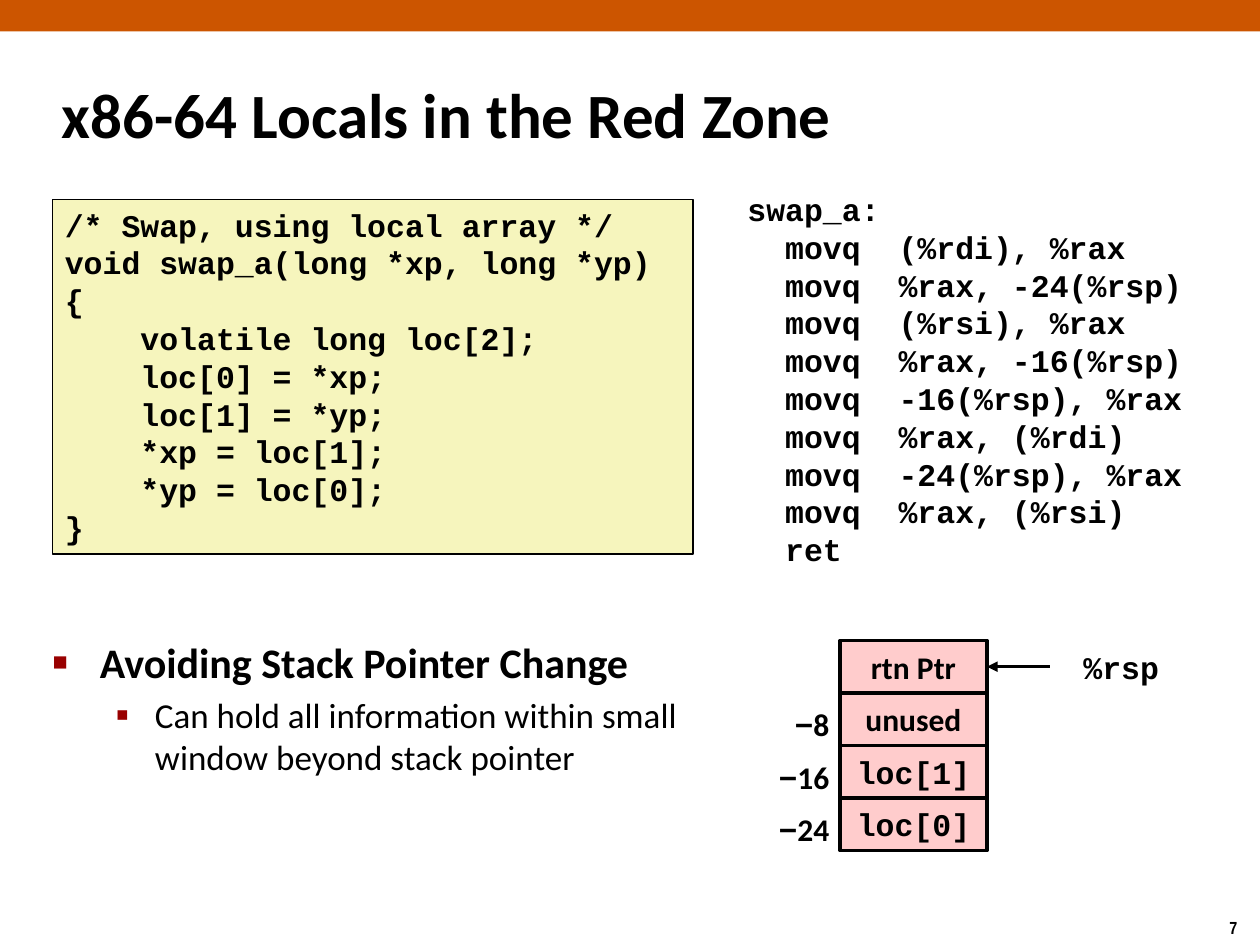
import dataclasses

import pptx
import pptx.dml.color
import pptx.enum.dml
import pptx.enum.shapes
import pptx.enum.text
import pptx.oxml
import pptx.oxml.ns
import pptx.util

Pt = pptx.util.Pt
RGB = pptx.dml.color.RGBColor.from_string
Align = pptx.enum.text.PP_ALIGN
Anchor = pptx.enum.text.MSO_ANCHOR
RECTANGLE = pptx.enum.shapes.MSO_SHAPE.RECTANGLE


@dataclasses.dataclass(frozen=True)
class Theme:
    ink: str = "000000"
    bar: str = "CC5500"
    code: str = "F6F5BD"
    stack: str = "FFCCCC"
    bullet: str = "990000"
    sans: str = "Calibri"
    mono: str = "Courier New"
    sign: str = "Arial"
    number: str = "Arial Narrow"
    title_size: int = 36
    point_size: int = 24
    detail_size: int = 20
    text_size: int = 18
    number_size: int = 10


theme = Theme()


def write(frame, lines, face, size=theme.text_size, align=Align.LEFT, **frame_format):
    frame_format = {"word_wrap": True, "vertical_anchor": Anchor.TOP} | frame_format
    for key, value in frame_format.items():
        setattr(frame, key, value)
    for index, line in enumerate(lines):
        paragraph = frame.add_paragraph() if index else frame.paragraphs[0]
        paragraph.alignment = align
        for text, run_face in line if isinstance(line, list) else [(line, face)]:
            run = paragraph.add_run()
            run.text = text
            run.font.color.rgb = RGB(theme.ink)
            for key, value in {"name": run_face, "size": Pt(size), "bold": True}.items():
                setattr(run.font, key, value)


def add_panel(left, top, width, height, fill, line_width):
    panel = slide.shapes.add_shape(RECTANGLE, Pt(left), Pt(top), Pt(width), Pt(height))
    panel.shadow.inherit = False
    panel.fill.solid()
    panel.fill.fore_color.rgb = RGB(fill)
    if line_width:
        panel.line.color.rgb = RGB(theme.ink)
        panel.line.width = Pt(line_width)
    else:
        panel.line.fill.background()
    return panel


deck = pptx.Presentation()
deck.slide_width, deck.slide_height = Pt(720), Pt(540)
slide = deck.slides.add_slide(deck.slide_layouts[5])

add_panel(0, 0, 720, 18, theme.bar, 0)

title = slide.shapes.title
for key, value in {"left": 28, "top": 34.5, "width": 597.5, "height": 60}.items():
    setattr(title, key, Pt(value))
write(title.text_frame, ["x86-64 Locals in the Red Zone"], theme.sans, theme.title_size,
      vertical_anchor=Anchor.MIDDLE, auto_size=pptx.enum.text.MSO_AUTO_SIZE.NONE)

page_number = slide.shapes.add_textbox(Pt(695.5), Pt(520.5), Pt(24.5), Pt(19.5))
write(page_number.text_frame, ["7"], theme.number, theme.number_size, word_wrap=False)

c_code = add_panel(30, 114, 366, 202.5, theme.code, 1)
write(c_code.text_frame, [
    "/* Swap, using local array */",
    "void swap_a(long *xp, long *yp) {",
    "    volatile long loc[2];",
    "    loc[0] = *xp;",
    "    loc[1] = *yp;",
    "    *xp = loc[1];",
    "    *yp = loc[0];",
    "}",
], theme.mono)

assembly = slide.shapes.add_textbox(Pt(420), Pt(105), Pt(282), Pt(223))
moves = ["(%rdi), %rax", "%rax, -24(%rsp)", "(%rsi), %rax", "%rax, -16(%rsp)",
         "-16(%rsp), %rax", "%rax, (%rdi)", "-24(%rsp), %rax", "%rax, (%rsi)"]
write(assembly.text_frame,
      ["swap_a:"] + [f"  movq  {operands}" for operands in moves] + ["  ret"], theme.mono)

points = slide.shapes.add_textbox(Pt(23), Pt(360), Pt(379.5), Pt(120))
write(points.text_frame, [
    "Avoiding Stack Pointer Change",
    "Can hold all information within small window beyond stack pointer",
], theme.sans)
point_formats = [
    (0, theme.point_size, True, 27, -27, "■", 60),
    (1, theme.detail_size, False, 58.5, -22.5, "▪", 110),
]
for point, (level, size, bold, margin, indent, mark, percent) in zip(
        points.text_frame.paragraphs, point_formats):
    for key, value in {"level": level, "space_before": Pt(size * 0.2)}.items():
        setattr(point, key, value)
    for key, value in {"size": Pt(size), "bold": bold}.items():
        setattr(point.runs[0].font, key, value)
    properties = point._p.get_or_add_pPr()
    for key, value in {"marL": margin, "indent": indent}.items():
        properties.set(key, str(int(Pt(value))))
    for bullet_xml in (
        f'<a:buClr {{}}><a:srgbClr val="{theme.bullet}"/></a:buClr>',
        f'<a:buSzPct {{}} val="{percent * 1000}"/>',
        f'<a:buFont {{}} typeface="{theme.sign}"/>',
        f'<a:buChar {{}} char="{mark}"/>',
    ):
        properties.append(pptx.oxml.parse_xml(bullet_xml.format(pptx.oxml.ns.nsdecls("a"))))

stack_left, stack_top, slot_width, slot_height = 480, 366, 84, 30
stack = [("rtn Ptr", theme.sans, ""), ("unused", theme.sans, "8"),
         ("loc[1]", theme.mono, "16"), ("loc[0]", theme.mono, "24")]
slots = []
for row, (content, face, offset) in enumerate(stack):
    top = stack_top + row * slot_height
    slot = add_panel(stack_left, top, slot_width, slot_height, theme.stack, 2)
    write(slot.text_frame, [content], face, align=Align.CENTER,
          word_wrap=False, vertical_anchor=Anchor.MIDDLE)
    slots.append(slot)
    if offset:
        offset_label = slide.shapes.add_textbox(Pt(420), Pt(top + 3.5), Pt(57.5), Pt(29))
        write(offset_label.text_frame, [[("−", theme.sign), (offset, theme.sans)]], theme.sans,
              align=Align.RIGHT, margin_left=Pt(3.6), margin_right=Pt(3.6))

pointer_y = stack_top + slot_height / 2
stack_pointer = slide.shapes.add_connector(
    pptx.enum.shapes.MSO_CONNECTOR.STRAIGHT,
    Pt(600), Pt(pointer_y), Pt(stack_left + slot_width), Pt(pointer_y))
stack_pointer.end_connect(slots[0], 3)
stack_pointer.line.color.rgb = RGB(theme.ink)
stack_pointer.line.width = Pt(2)
namespace = pptx.oxml.ns.nsdecls("a")
stack_pointer.line._get_or_add_ln().append(
    pptx.oxml.parse_xml(f'<a:tailEnd {namespace} type="triangle"/>'))
stack_pointer._element.spPr.append(pptx.oxml.parse_xml(f"<a:effectLst {namespace}/>"))

register = slide.shapes.add_textbox(Pt(612), Pt(367), Pt(57.5), Pt(29))
write(register.text_frame, ["%rsp"], theme.mono, word_wrap=False)

deck.save("out.pptx")
